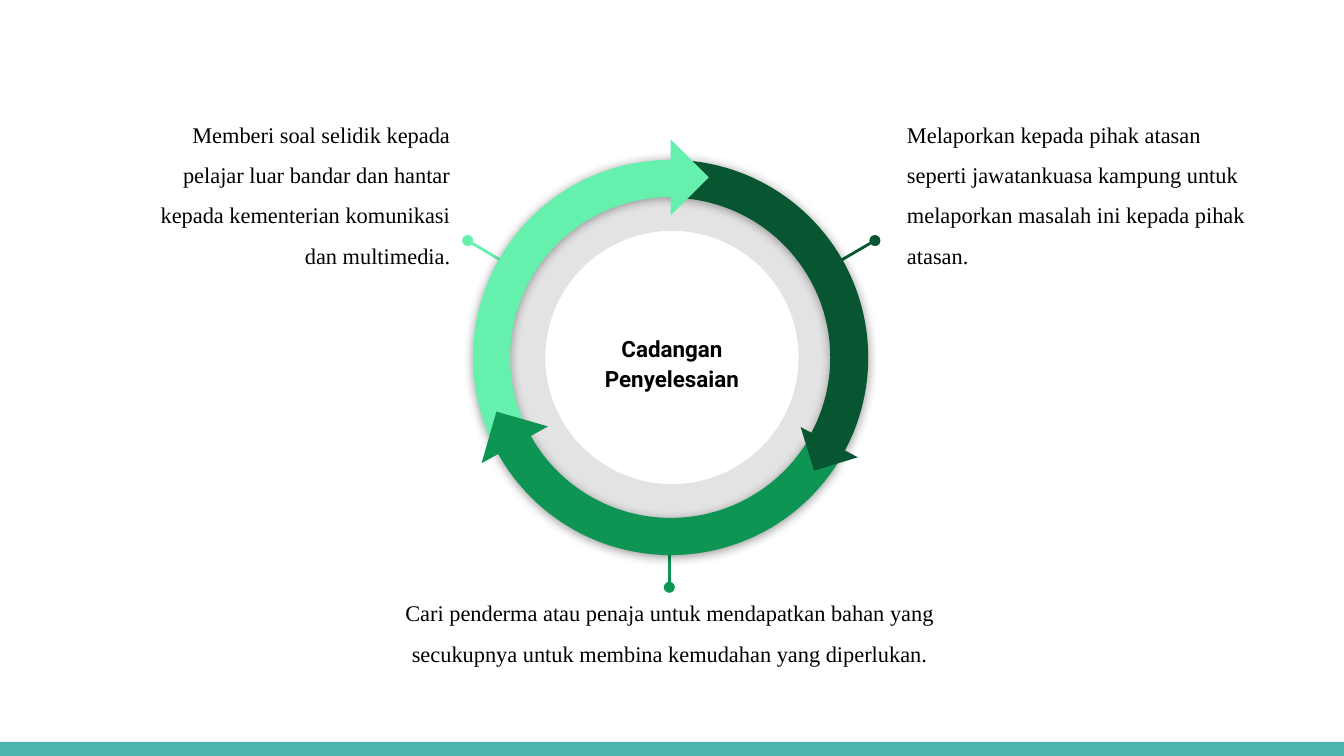
from lxml import etree
from pptx import Presentation
from pptx.dml.color import RGBColor
from pptx.enum.shapes import MSO_CONNECTOR, MSO_SHAPE
from pptx.enum.text import MSO_ANCHOR, PP_ALIGN
from pptx.oxml.ns import qn
from pptx.util import Inches, Pt

ARC, DONUT = MSO_SHAPE.BLOCK_ARC, MSO_SHAPE.DONUT
RECT, TRIANGLE = MSO_SHAPE.RECTANGLE, MSO_SHAPE.RIGHT_TRIANGLE
STRAIGHT = MSO_CONNECTOR.STRAIGHT
LEFT, CENTER, RIGHT = PP_ALIGN.LEFT, PP_ALIGN.CENTER, PP_ALIGN.RIGHT
TOP, MIDDLE = MSO_ANCHOR.TOP, MSO_ANCHOR.MIDDLE

COLORS = {
    "black": "000000",
    "bar": "4DB6AC",
    "dark": "085631",
    "light": "65F0AD",
    "mid": "0E9453",
}
RING = (3.52, 1.19, 2.94, 2.94)
BODY = {"line_spacing": 1.5, "space_before": Pt(12), "space_after": Pt(12)}
BODY_FONT = {"name": "Times New Roman", "size": Pt(12)}
TITLE = {"line_spacing": 1.15}
TITLE_FONT = {"name": "Roboto", "size": Pt(12), "bold": True}


def rgb(color):
    return RGBColor.from_string(COLORS[color])


def set_all(target, values):
    for name, value in values.items():
        setattr(target, name, value)


def add_alpha(parent, percent):
    """Set the opacity of the colour inside parent."""
    clr = next(parent.iter(qn("a:srgbClr")))
    etree.SubElement(clr, qn("a:alpha"), val=str(percent * 1000))


def add_filled(slide, kind, box, color, rotation=0, adjustments=()):
    sp = slide.shapes.add_shape(kind, *map(Inches, box))
    sp.shadow.inherit = False
    sp.fill.solid()
    sp.fill.fore_color.rgb = rgb(color)
    sp.line.fill.background()
    sp.rotation = rotation
    for i, value in enumerate(adjustments):
        sp.adjustments[i] = value
    return sp


def add_arc(slide, color, rotation, adjustments, flip=False):
    """Add one third of the ring, with a soft shadow below it."""
    sp = add_filled(slide, ARC, RING, color, rotation, adjustments)
    sp_pr = sp._element.spPr
    if flip:
        sp_pr.find(qn("a:xfrm")).set("flipH", "1")
    shadow = etree.SubElement(
        sp_pr.find(qn("a:effectLst")), qn("a:outerShdw"),
        blurRad=str(Pt(5.6)), dist=str(Pt(0.8)), dir=str(90 * 60000),
        algn="ctr", rotWithShape="0")
    etree.SubElement(shadow, qn("a:srgbClr"), val=COLORS["black"])
    add_alpha(shadow, 40)


def add_arrow_tip(slide, color, left, top, size, rotation):
    add_filled(slide, TRIANGLE, (left, top, size, size), color, rotation)


def add_pointer(slide, color, start, end):
    """Add a line with a dot at its start."""
    line = slide.shapes.add_connector(STRAIGHT, *map(Inches, start + end))
    line.line.color.rgb = rgb(color)
    line.line.width = Pt(1.5)
    ln = line.line._get_or_add_ln()
    etree.SubElement(ln, qn("a:headEnd"), type="oval", w="med", len="med")
    etree.SubElement(line._element.spPr, qn("a:effectLst"))


def add_text(slide, box, text, align, paragraph=BODY, font=BODY_FONT, anchor=TOP):
    tf = slide.shapes.add_textbox(*map(Inches, box)).text_frame
    margins = ("margin_left", "margin_top", "margin_right", "margin_bottom")
    set_all(tf, dict.fromkeys(margins, Inches(0.1)))
    set_all(tf, {"word_wrap": True, "vertical_anchor": anchor})
    p = tf.paragraphs[0]
    set_all(p, {"alignment": align, **paragraph})
    r = p.add_run()
    r.text = text
    set_all(r.font, font)
    r.font.color.rgb = rgb("black")


def main():
    prs = Presentation()
    prs.slide_width, prs.slide_height = Inches(10), Inches(5.625)
    slide = prs.slides.add_slide(prs.slide_layouts[6])

    add_filled(slide, RECT, (0, 5.52, 10, 0.11), "bar")
    donut = add_filled(slide, DONUT, (3.61, 1.27, 2.78, 2.78), "black",
                       adjustments=(0.161,))
    add_alpha(donut._element.spPr, 11)

    add_pointer(slide, "light", (3.48, 1.79), (3.95, 2.07))
    add_pointer(slide, "dark", (6.51, 1.79), (6.03, 2.07))
    add_pointer(slide, "mid", (4.98, 4.37), (4.98, 3.87))
    add_text(slide, (4.21, 2.25, 1.58, 0.88), "Cadangan Penyelesaian",
             CENTER, TITLE, TITLE_FONT, MIDDLE)

    # Each tip covers the start of the next arc, so the order matters.
    add_arc(slide, "dark", 30, (144.14, 0.01, 0.096))
    add_arc(slide, "light", 330, (143.49, 214.73, 0.094), flip=True)
    add_arrow_tip(slide, "light", 4.79, 1.12, 0.4, 225)
    add_arc(slide, "mid", 210, (143.16, 215.03, 0.094), flip=True)
    add_arrow_tip(slide, "dark", 6, 3.12, 0.34, 342.9)
    add_arrow_tip(slide, "mid", 3.63, 3.11, 0.4, 106)

    add_text(slide, (0.91, 0.7, 2.54, 1.55),
             "Memberi soal selidik kepada pelajar luar bandar dan hantar "
             "kepada kementerian komunikasi dan multimedia.", RIGHT)
    add_text(slide, (6.65, 0.7, 2.78, 1.47),
             "Melaporkan kepada pihak atasan seperti jawatankuasa kampung "
             "untuk melaporkan masalah ini kepada pihak atasan.", LEFT)
    add_text(slide, (2.58, 4.26, 4.81, 0.96),
             "Cari penderma atau penaja untuk mendapatkan bahan yang "
             "secukupnya untuk membina kemudahan yang diperlukan.", CENTER)
    prs.save("out.pptx")


if __name__ == "__main__":
    main()
